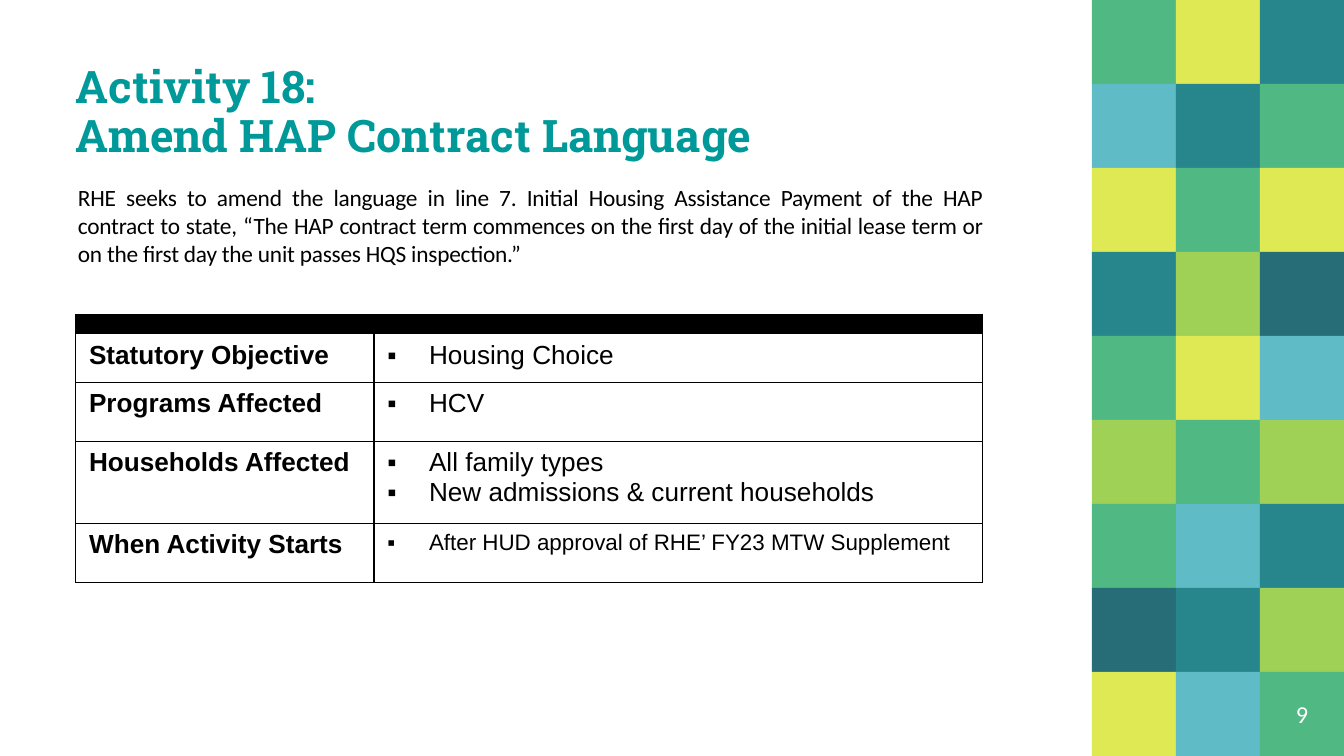
from pptx import Presentation
from pptx import util as u
from pptx.dml.color import RGBColor
from pptx.enum import shapes, text
from pptx.oxml.xmlchemy import OxmlElement

COLS, ROWS = 16, 9
TEAL, BLACK, WHITE = "009999", "000000", "FFFFFF"
PALETTE = {"L": "9ED155", "N": "266D78", "Y": "DFE954",
           "G": "50B883", "T": "27868B", "S": "5FBBC5"}
MOSAIC = ["GYT", "STG", "YGY", "TLN", "GYS", "LGL", "GST", "NTL", "YSG"]
DETAILS = [
    ("Statutory Objective", [["Housing Choice"]], 14),
    ("Programs Affected", [["HCV"]], 14),
    ("Households Affected",
     [["All family types"], ["New admissions", " & ", "current households"]], 14),
    ("When Activity Starts",
     [["After HUD approval of RHE’ FY23 MTW Supplement"]], 12),
]


def color(value):
    return RGBColor.from_string(value)


def element(parent, tag, **attributes):
    child = OxmlElement(tag)
    for name, value in attributes.items():
        child.set(name, str(value))
    parent.append(child)
    return child


class Deck:
    def __init__(self):
        self.file = Presentation()
        self.file.slide_width, self.file.slide_height = u.Inches(10), u.Inches(5.625)
        self.slide = self.file.slides.add_slide(self.file.slide_layouts[6])

    def place(self, col, row, width, height):
        across, down = self.file.slide_width / COLS, self.file.slide_height / ROWS
        return [round(n) for n in (col * across, row * down, width * across, height * down)]

    def tile(self, col, row, fill):
        tile = self.slide.shapes.add_shape(
            shapes.MSO_SHAPE.RECTANGLE, *self.place(col, row, 1, 1))
        tile.shadow.inherit = False
        tile.fill.solid()
        tile.fill.fore_color.rgb = color(fill)
        tile.line.fill.background()

    def run(self, paragraph, words, size, font, ink=BLACK, bold=False, spacing=0):
        run = paragraph.add_run()
        run.text = words
        run.font.size, run.font.name, run.font.bold = u.Pt(size), font, bold
        run.font.color.rgb = color(ink)
        if spacing:
            run.font._element.set("spc", str(spacing))

    def textbox(self, spot, lines, size, font, ink=BLACK, bold=False, spacing=0,
                align=text.PP_ALIGN.LEFT, anchor=text.MSO_ANCHOR.MIDDLE,
                leading=1.0, indent=0):
        frame = self.slide.shapes.add_textbox(*self.place(*spot)).text_frame
        frame.word_wrap = True
        frame.vertical_anchor = anchor
        frame.margin_left = frame.margin_right = frame.margin_top = frame.margin_bottom = 0
        paragraph = frame.paragraphs[0]
        paragraph.alignment, paragraph.line_spacing = align, leading
        paragraph._p.get_or_add_pPr().set("marL", str(u.Inches(indent)))
        for number, line in enumerate(lines):
            if number:
                paragraph.add_line_break()
            self.run(paragraph, line, size, font, ink, bold, spacing)

    def finish_cell(self, cell, fill):
        properties = cell._tc.get_or_add_tcPr()
        for side in "LRTB":
            line = element(properties, f"a:ln{side}", w=u.Pt(0.75))
            element(element(line, "a:solidFill"), "a:srgbClr", val=BLACK)
        cell.fill.solid()
        cell.fill.fore_color.rgb = color(fill)

    def bullet(self, paragraph):
        hang = u.Inches(0.31)
        properties = paragraph._p.get_or_add_pPr()
        properties.set("marL", str(hang))
        properties.set("indent", str(-hang))
        element(element(properties, "a:buClr"), "a:srgbClr", val=BLACK)
        element(properties, "a:buFont", typeface="Arial")
        element(properties, "a:buChar", char="▪")

    def details(self, spot, widths, heights, rows):
        table = self.slide.shapes.add_table(
            len(heights), len(widths), *self.place(*spot)).table
        for column, width in zip(table.columns, widths):
            column.width = u.Inches(width)
        for row, height in zip(table.rows, heights):
            row.height = u.Inches(height)
        for header in table.rows[0].cells:
            header.margin_top = header.margin_bottom = 0
            element(header.text_frame.paragraphs[0]._p, "a:endParaRPr", sz=600)
            self.finish_cell(header, BLACK)
        table.cell(0, 0).merge(table.cell(0, 1))
        for number, (label, items, size) in enumerate(rows, 1):
            heading, answer = table.rows[number].cells
            self.run(heading.text_frame.paragraphs[0], label, 14, "Arial", bold=True)
            for order, pieces in enumerate(items):
                frame = answer.text_frame
                paragraph = frame.add_paragraph() if order else frame.paragraphs[0]
                self.bullet(paragraph)
                for piece in pieces:
                    self.run(paragraph, piece, size, "Arial")
            for cell in (heading, answer):
                self.finish_cell(cell, WHITE)


def main():
    deck = Deck()
    for row, keys in enumerate(MOSAIC):
        for col, key in enumerate(keys, COLS - len(keys)):
            deck.tile(col, row, PALETTE[key])
    deck.textbox((0.9, 0.74, 11.2, 1.22),
                 ["Activity 18:", "Amend HAP Contract Language"],
                 24, "Roboto Slab", TEAL, bold=True, leading=0.9)
    deck.textbox((0.8, 2.18, 10.9, 1.33),
                 ["RHE seeks to amend the language in line 7. Initial Housing Assistance "
                  "Payment of the HAP contract to state, “The HAP contract term commences "
                  "on the first day of the initial lease term or on the first day the unit "
                  "passes HQS inspection.”"],
                 12.5, "Calibri", spacing=-10, align=text.PP_ALIGN.JUSTIFY,
                 anchor=text.MSO_ANCHOR.TOP, indent=0.08)
    deck.textbox((15, 8, 1, 1), ["9"], 13, "Calibri", WHITE, align=text.PP_ALIGN.CENTER)
    deck.details((0.9, 3.75, 10.8, 3.18), [2.22, 4.53],
                 [0.14, 0.36, 0.44, 0.61, 0.44], DETAILS)
    deck.file.save("out.pptx")


if __name__ == "__main__":
    main()
